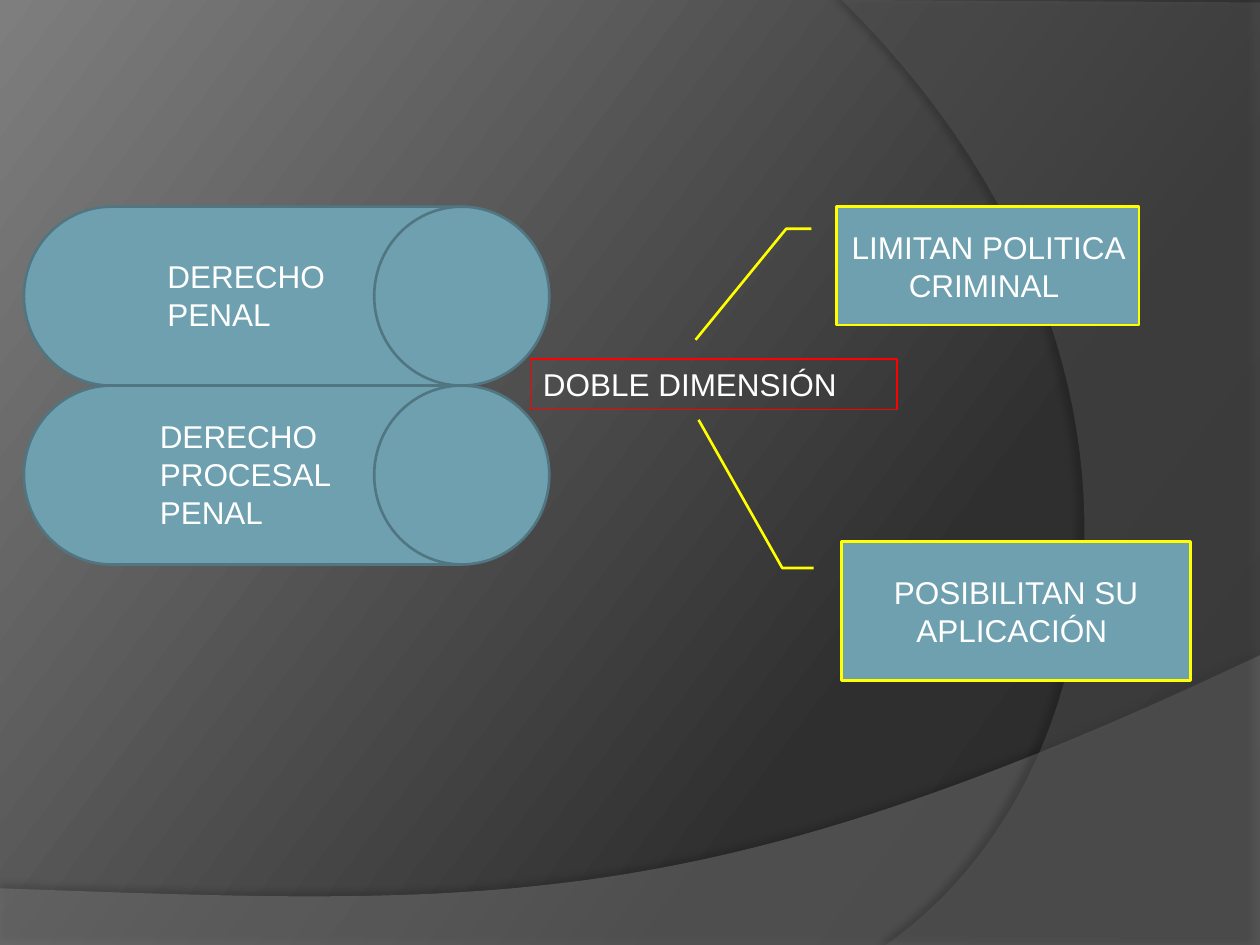
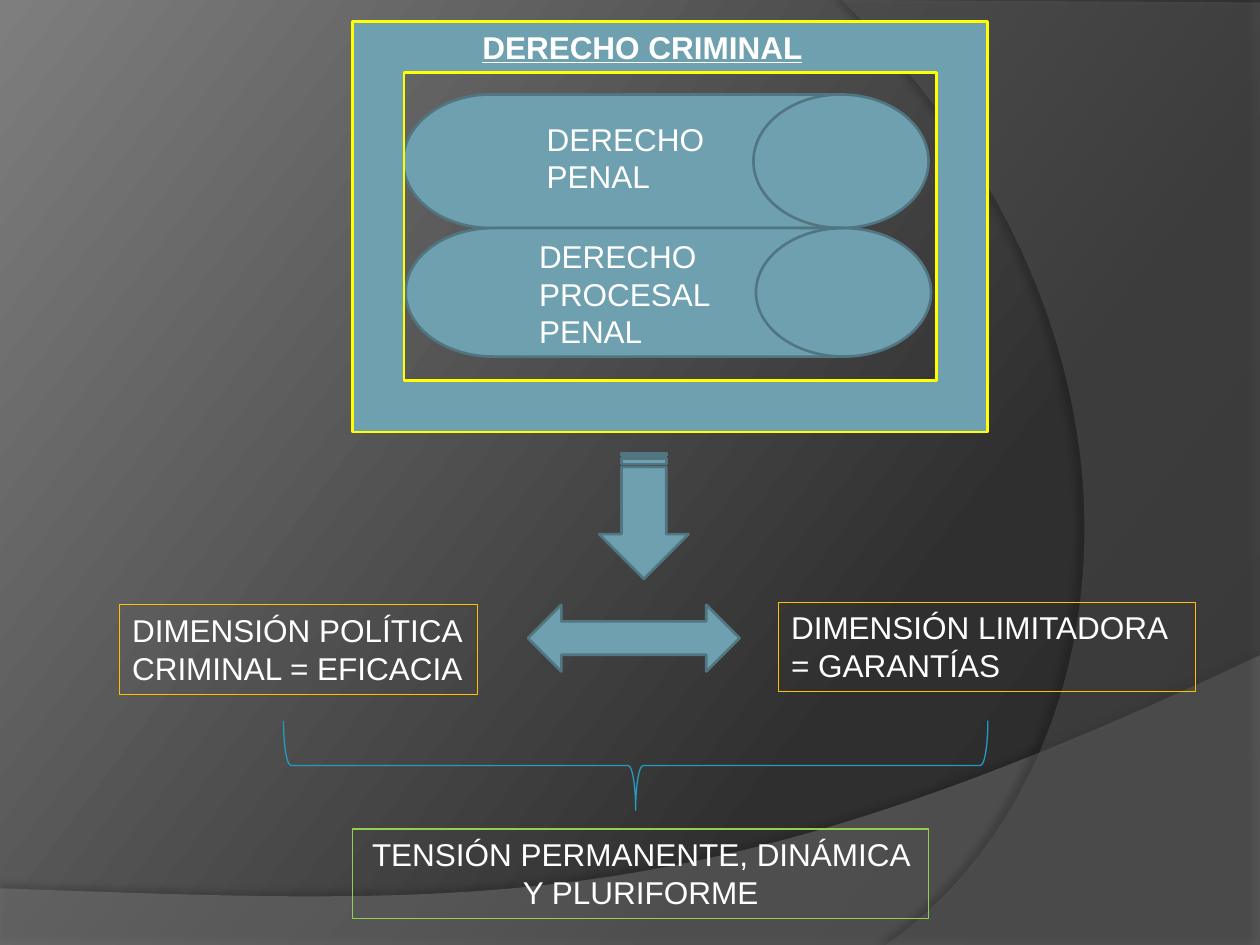
import copy
from dataclasses import dataclass
from typing import Optional

import pptx
import pptx.dml.color
import pptx.enum.shapes
import pptx.enum.text
import pptx.oxml
import pptx.oxml.ns
import pptx.util
from pptx.util import Inches

RGBColor = pptx.dml.color.RGBColor
SHAPE = pptx.enum.shapes.MSO_SHAPE
ALIGN = pptx.enum.text.PP_ALIGN
ANCHOR = pptx.enum.text.MSO_ANCHOR

# Shared style
FONT = "Arial"
TEXT_SIZE = pptx.util.Pt(18)
WHITE = RGBColor(0xFF, 0xFF, 0xFF)
TEAL = RGBColor(0x6E, 0xA0, 0xB0)
DARK_TEAL = RGBColor(0x51, 0x76, 0x82)
YELLOW = RGBColor(0xFF, 0xFF, 0x00)
RED = RGBColor(0xFF, 0x00, 0x00)
ORANGE = RGBColor(0xFF, 0xC0, 0x00)
GREEN = RGBColor(0x92, 0xD0, 0x50)
BLUE = RGBColor(0x23, 0x9B, 0xC2)
BAND_GREY = RGBColor(0x7F, 0x7F, 0x7F)
SIDE_GREY = RGBColor(0x5E, 0x5E, 0x5E)
BACKDROP = ((0, RGBColor(0x28, 0x28, 0x28)),
            (0.3, RGBColor(0x2F, 0x2F, 0x2F)),
            (1, RGBColor(0x7E, 0x7E, 0x7E)))
CURVE_STEPS = 48

Point = tuple[float, float]
Box = tuple[float, float, float, float]


@dataclass(frozen=True)
class Figure:
    kind: SHAPE
    box: Box
    fill: Optional[RGBColor] = TEAL
    line: RGBColor = DARK_TEAL
    width: float = 1.5
    rotation: float = 0
    adjustments: tuple[float, ...] = ()
    text: str = ""
    align: ALIGN = ALIGN.LEFT
    anchor: ANCHOR = ANCHOR.TOP


@dataclass(frozen=True)
class Label:
    text: str
    box: Box
    heading: bool = False


@dataclass(frozen=True)
class Sweep:
    """A translucent backdrop area: corners, with a curve after the last one."""
    corners: tuple[Point, ...]
    curve: tuple[Point, Point, Point]
    colour: RGBColor
    opacity: int
    shadow_opacity: int
    shadow_distance: float
    shadow_angle: int


def callout(text: str, box: Box, adjustments: tuple[float, ...] = ()) -> Figure:
    return Figure(SHAPE.LINE_CALLOUT_2, box, line=YELLOW, adjustments=adjustments,
                  text=text, align=ALIGN.CENTER, anchor=ANCHOR.MIDDLE)


def outlined(text: str, box: Box, line: RGBColor, align: ALIGN = ALIGN.LEFT) -> Figure:
    return Figure(SHAPE.RECTANGLE, box, None, line, 0.75, text=text, align=align)


SWEEPS = (
    Sweep(((0, 7.05), (0, 7.51), (10, 7.51), (10, 5.2)),
          ((5.59, 7.29), (3.91, 7.19), (0, 7.05)), BAND_GREY, 45, 35, 3.5, 270),
    Sweep(((10, 0.02), (10, 7.5), (7.03, 7.5)),
          ((8.91, 6.19), (9.47, 2.75), (6.68, 0)), SIDE_GREY, 40, 45, 4, 180),
)


def law_drums(penal: Box, procedural: Box, penal_text_top: float,
              procedural_text_top: float) -> list[Figure | Label]:
    """The two branches of law, stacked, each with its label."""
    left = penal[0]
    return [
        Figure(SHAPE.FLOWCHART_DIRECT_ACCESS_STORAGE, penal),
        Figure(SHAPE.FLOWCHART_DIRECT_ACCESS_STORAGE, procedural),
        Label("DERECHO PENAL", (left + 1.04, penal_text_top, 2.18, 0.71)),
        Label("DERECHO PROCESAL PENAL",
              (left + 0.98, procedural_text_top, 2.23, 1.01)),
    ]


DOUBLE_DIMENSION = law_drums((0.19, 1.64, 4.17, 1.42), (0.19, 3.06, 4.17, 1.42),
                             1.99, 3.26) + [
    callout("LIMITAN POLITICA CRIMINAL ", (6.64, 1.64, 2.4, 0.94)),
    callout("POSIBILITAN SU APLICACIÓN ", (6.68, 4.3, 2.77, 1.1),
            (0.19, -0.08, 0.19, -0.17, -0.88, -0.41)),
    outlined("DOBLE DIMENSIÓN", (4.21, 2.85, 2.91, 0.4), RED),
]

PERMANENT_TENSION = law_drums((3.2, 0.75, 4.17, 1.06), (3.22, 1.81, 4.17, 1.02),
                              0.9, 1.83) + [
    Figure(SHAPE.FRAME, (2.8, 0.17, 5.04, 3.26), line=YELLOW),
    Label("DERECHO CRIMINAL", (3.73, 0.17, 2.76, 0.4), heading=True),
    Figure(SHAPE.STRIPED_RIGHT_ARROW, (4.61, 3.74, 1, 0.71), rotation=90),
    outlined("DIMENSIÓN POLÍTICA CRIMINAL = EFICACIA", (0.95, 4.8, 2.84, 0.71), ORANGE),
    outlined("DIMENSIÓN LIMITADORA = GARANTÍAS", (6.18, 4.78, 3.31, 0.71), ORANGE),
    Figure(SHAPE.LEFT_RIGHT_ARROW, (4.19, 4.8, 1.68, 0.53)),
    Figure(SHAPE.LEFT_BRACE, (4.69, 3.28, 0.71, 5.59), None, BLUE, 0.75, rotation=270),
    outlined("TENSIÓN PERMANENTE, DINÁMICA Y PLURIFORME", (2.8, 6.58, 4.57, 0.71),
             GREEN, ALIGN.CENTER),
]


def write(frame, text: str, align: ALIGN = ALIGN.LEFT,
          anchor: ANCHOR = ANCHOR.TOP, heading: bool = False) -> None:
    frame.word_wrap = True
    frame.vertical_anchor = anchor
    frame.text = text
    paragraph = frame.paragraphs[0]
    paragraph.alignment = align
    font = paragraph.font
    font.name, font.size = FONT, TEXT_SIZE
    font.color.rgb = WHITE
    if heading:
        font.bold = font.underline = True


def draw(slide, part: Figure | Label) -> None:
    box = [Inches(length) for length in part.box]
    if isinstance(part, Label):
        write(slide.shapes.add_textbox(*box).text_frame, part.text, heading=part.heading)
        return
    shape = slide.shapes.add_shape(part.kind, *box)
    shape.shadow.inherit = False
    shape.rotation = part.rotation
    for index, value in enumerate(part.adjustments):
        shape.adjustments[index] = value
    if part.fill is None:
        shape.fill.background()
    else:
        shape.fill.solid()
        shape.fill.fore_color.rgb = part.fill
    shape.line.color.rgb = part.line
    shape.line.width = pptx.util.Pt(part.width)
    if part.text:
        write(shape.text_frame, part.text, part.align, part.anchor)


def bezier(start: Point, controls: tuple[Point, Point, Point]) -> list[Point]:
    nodes = (start, *controls)
    points = []
    for step in range(1, CURVE_STEPS + 1):
        t = step / CURVE_STEPS
        weights = ((1 - t) ** 3, 3 * t * (1 - t) ** 2, 3 * t * t * (1 - t), t ** 3)
        points.append((sum(w * n[0] for w, n in zip(weights, nodes)),
                       sum(w * n[1] for w, n in zip(weights, nodes))))
    return points


def draw_sweep(slide, sweep: Sweep):
    outline = [(Inches(x), Inches(y)) for x, y in
               (*sweep.corners, *bezier(sweep.corners[-1], sweep.curve))]
    builder = slide.shapes.build_freeform(*outline[0])
    builder.add_line_segments(outline[1:], close=True)
    area = builder.convert_to_shape()
    area.fill.solid()
    area.fill.fore_color.rgb = sweep.colour
    area.line.fill.background()
    area.shadow.inherit = False

    # Transparency and shadow
    qn = pptx.oxml.ns.qn
    properties = area.element.spPr
    colour = properties.find(qn("a:solidFill")).find(qn("a:srgbClr"))
    colour.append(pptx.oxml.parse_xml(
        f'<a:alpha {pptx.oxml.ns.nsdecls("a")} val="{sweep.opacity * 1000}"/>'))
    properties.find(qn("a:effectLst")).append(pptx.oxml.parse_xml(
        f'<a:outerShdw {pptx.oxml.ns.nsdecls("a")} blurRad="{pptx.util.Pt(4)}" '
        f'dist="{pptx.util.Pt(sweep.shadow_distance)}" dir="{sweep.shadow_angle * 60000}" '
        f'algn="ctr" rotWithShape="0"><a:srgbClr val="000000">'
        f'<a:alpha val="{sweep.shadow_opacity * 1000}"/></a:srgbClr></a:outerShdw>'))
    return area


def set_backdrop(layout, slide) -> None:
    """Give the layout its gradient and sweeps, using slide to build the sweeps."""
    fill = layout.background.fill
    fill.gradient()
    fill.gradient_angle = 143
    stops = next(layout.element.iter(pptx.oxml.ns.qn("a:gsLst")))
    stops.append(copy.deepcopy(stops[-1]))
    for stop, (position, colour) in zip(fill.gradient_stops, BACKDROP):
        stop.position = position
        stop.color.rgb = colour
    for sweep in SWEEPS:
        layout.shapes.element.append(draw_sweep(slide, sweep).element)


def main() -> None:
    deck = pptx.Presentation()
    deck.slide_width, deck.slide_height = Inches(10), Inches(7.5)
    blank = deck.slide_layouts[6]
    contents = (DOUBLE_DIMENSION, PERMANENT_TENSION)
    slides = [deck.slides.add_slide(blank) for _ in contents]
    set_backdrop(blank, slides[0])
    for slide, parts in zip(slides, contents):
        for part in parts:
            draw(slide, part)
    deck.save("out.pptx")


if __name__ == "__main__":
    main()
